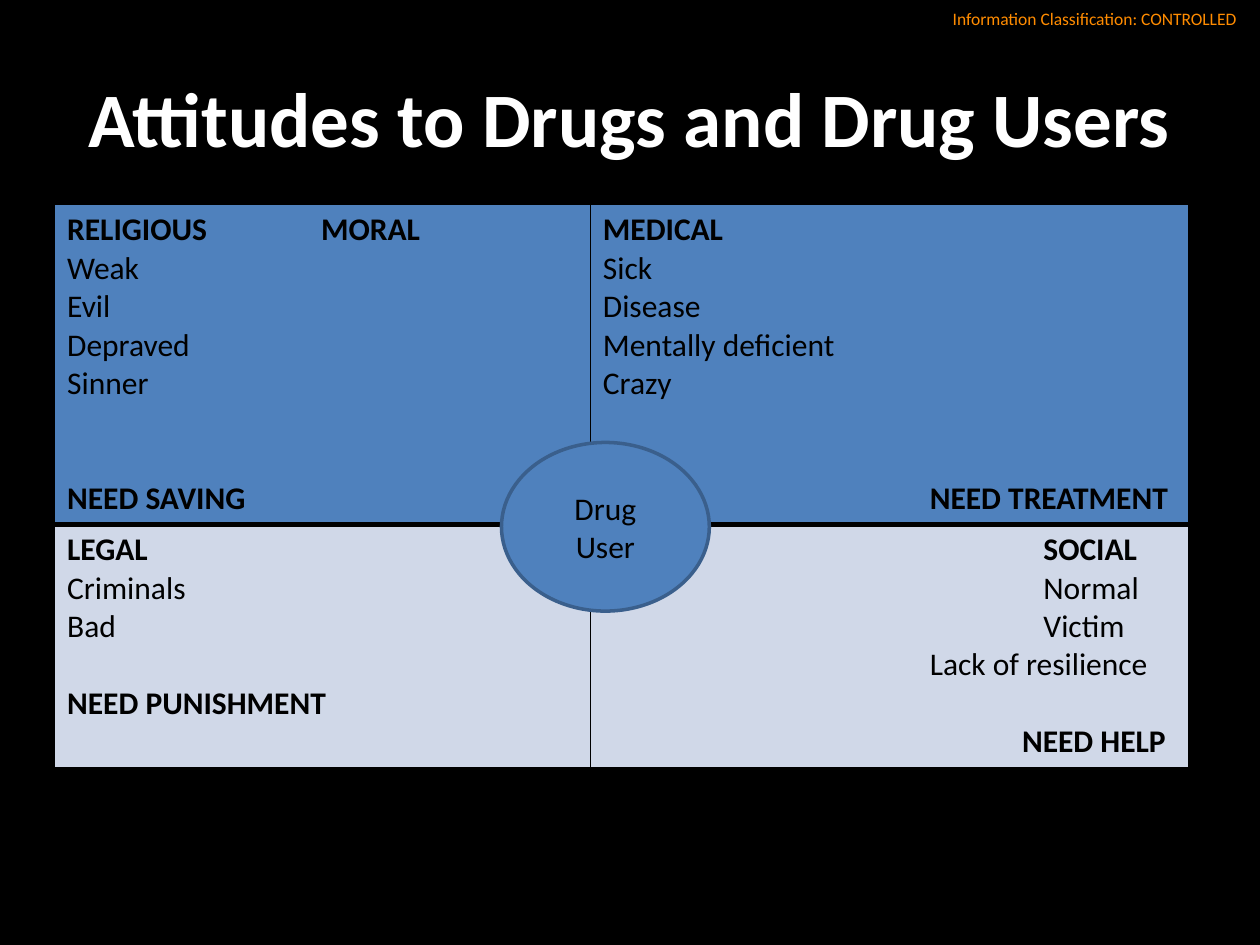
from lxml import etree
from pptx import Presentation
from pptx.dml.color import RGBColor
from pptx.enum.shapes import MSO_SHAPE as Shape
from pptx.enum.text import MSO_ANCHOR as Anchor, PP_ALIGN as Align
from pptx.oxml import parse_xml
from pptx.oxml.ns import nsdecls, qn
from pptx.util import Cm, Pt

COLORS = {
    "black": "000000",
    "white": "FFFFFF",
    "orange": "FF8C00",
    "blue": "4F81BD",
    "dark blue": "3A5F8C",
    "pale blue": "D0D8E8",
}
FONT = "Calibri"
LINE_PT = 22  # height of one 18 pt text line


def rgb(name):
    return RGBColor.from_string(COLORS[name])


def write(paragraph, text, size=18, color="black", bold=False,
          align=Align.LEFT, lines_before=0, indent=0, tab=0):
    """Fill a paragraph; indent and tab are in centimetres."""
    run = paragraph.add_run()
    run.text = text
    run.font.name, run.font.size, run.font.bold = FONT, Pt(size), bold
    run.font.color.rgb = rgb(color)
    paragraph.alignment = align
    if lines_before:
        paragraph.space_before = Pt(lines_before * LINE_PT)
    properties = paragraph._p.get_or_add_pPr()
    if indent:
        properties.set("marL", str(Cm(indent)))
        properties.set("indent", "0")
    if tab:
        stops = etree.SubElement(properties, qn("a:tabLst"))
        etree.SubElement(stops, qn("a:tab"), pos=str(Cm(tab)), algn="l")


def write_lines(frame, lines):
    """Write (text, format) pairs, one paragraph each."""
    for i, (text, style) in enumerate(lines):
        write(frame.add_paragraph() if i else frame.paragraphs[0], text, **style)


def set_borders(cell, **widths):
    properties = cell._tc.get_or_add_tcPr()
    for i, side in enumerate("LRTB"):
        properties.insert(i, parse_xml(
            f'<a:ln{side} {nsdecls("a")} w="{Pt(widths.get(side, 1))}">'
            f'<a:solidFill><a:srgbClr val="{COLORS["black"]}"/></a:solidFill>'
            f'</a:ln{side}>'))


class SlideBuilder:
    """Holds the current slide and draws its elements in one style."""

    def __init__(self, slide):
        self.slide = slide
        self.slide.background.fill.solid()
        self.slide.background.fill.fore_color.rgb = rgb("black")

    def label(self, text, box, right_inset=0.25, **style):
        frame = self.slide.shapes.add_textbox(*map(Cm, box)).text_frame
        frame.word_wrap = True
        frame.vertical_anchor = Anchor.MIDDLE
        frame.margin_top = frame.margin_bottom = 0
        frame.margin_right = Cm(right_inset)
        write(frame.paragraphs[0], text, **style)

    def ellipse(self, lines, box):
        oval = self.slide.shapes.add_shape(Shape.OVAL, *map(Cm, box))
        oval.shadow.inherit = False
        oval.fill.solid()
        oval.fill.fore_color.rgb = rgb("blue")
        oval.line.color.rgb = rgb("dark blue")
        oval.line.width = Pt(2)
        oval.text_frame.vertical_anchor = Anchor.MIDDLE
        write_lines(oval.text_frame, [(t, {"align": Align.CENTER}) for t in lines])

    def quadrants(self, rows, left, top, widths, heights, fills):
        table = self.slide.shapes.add_table(
            len(heights), len(widths), Cm(left), Cm(top),
            Cm(sum(widths)), Cm(sum(heights))).table
        for column, width in zip(table.columns, widths):
            column.width = Cm(width)
        for r, (row, height, fill) in enumerate(zip(rows, heights, fills)):
            table.rows[r].height = Cm(height)
            for c, lines in enumerate(row):
                cell = table.cell(r, c)
                cell.fill.solid()
                cell.fill.fore_color.rgb = rgb(fill)
                set_borders(cell, **({"T": 3} if r else {"B": 3}))
                write_lines(cell.text_frame, lines)


def attitude(heading, views, need, gap, indents=(0, 0, 0), **heading_style):
    """Lines of one quadrant; indents are for heading and views, last view, need."""
    main, last, final = indents
    return [
        (heading, {"bold": True, "indent": main, **heading_style}),
        *((view, {"indent": main}) for view in views[:-1]),
        (views[-1], {"indent": last}),
        (need, {"bold": True, "lines_before": gap, "indent": final}),
    ]


def main():
    deck = Presentation()
    deck.slide_width, deck.slide_height = Cm(25.4), Cm(19.05)
    builder = SlideBuilder(deck.slides.add_slide(deck.slide_layouts[6]))

    builder.label("Information Classification: CONTROLLED", (18.72, 0, 6.68, 0.74),
                  right_inset=0.48, size=10, color="orange", align=Align.RIGHT)
    builder.label("Attitudes to Drugs and Drug Users", (1.27, 0.76, 22.86, 3.18),
                  size=44, color="white", bold=True, align=Align.CENTER)

    religious = attitude("RELIGIOUS\tMORAL", ["Weak", "Evil", "Depraved", "Sinner"],
                         "NEED SAVING", gap=2, tab=5.12)
    medical = attitude("MEDICAL", ["Sick", "Disease", "Mentally deficient", "Crazy"],
                       "NEED TREATMENT", gap=2, indents=(0, 0, 6.59))
    legal = attitude("LEGAL", ["Criminals", "Bad"], "NEED PUNISHMENT", gap=1)
    social = attitude("SOCIAL", ["Normal", "Victim", "Lack of resilience"],
                      "NEED HELP", gap=1, indents=(8.88, 6.59, 8.45))
    builder.quadrants([[religious, medical], [legal, social]], left=1.1, top=4.12,
                      widths=(10.8, 12.06), heights=(6.45, 4.9),
                      fills=("blue", "pale blue"))

    builder.ellipse(["Drug", "User"], (10.11, 8.92, 4.19, 3.4))
    deck.save("out.pptx")


if __name__ == "__main__":
    main()
